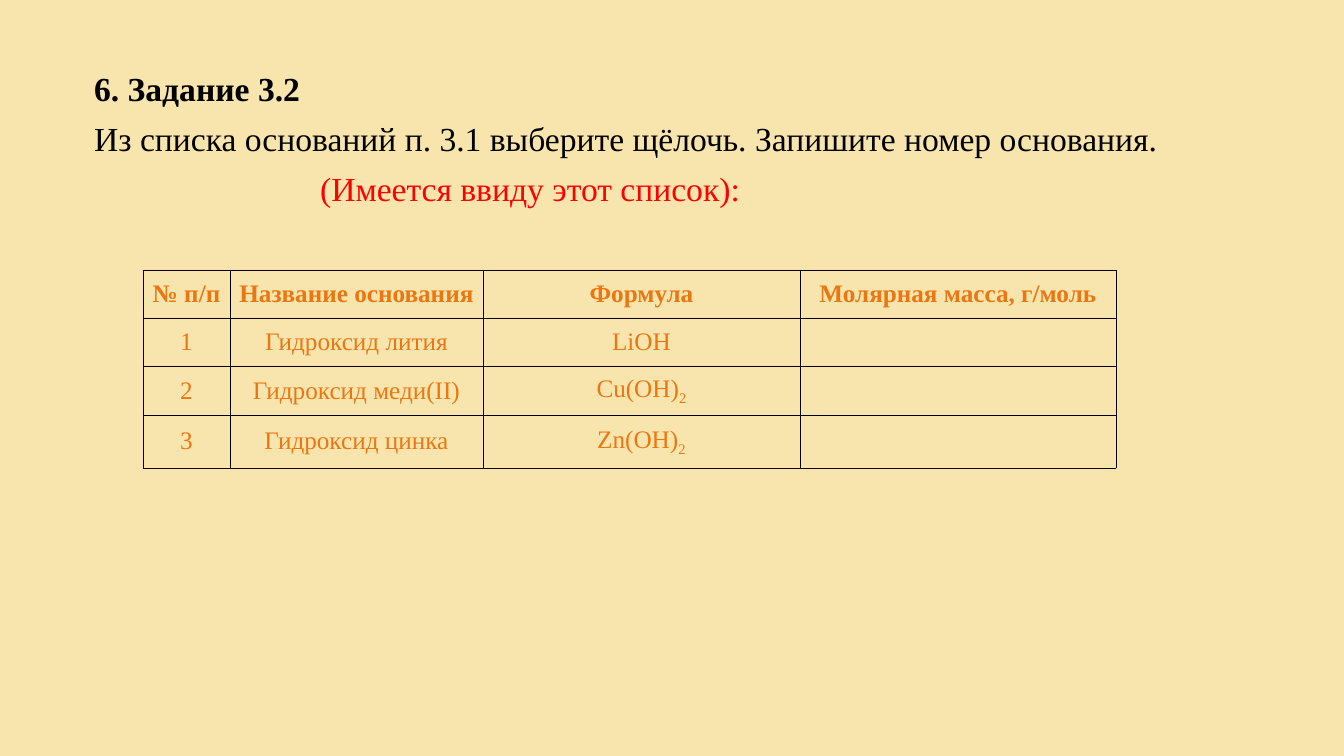
from lxml.etree import SubElement
from pptx import Presentation
from pptx.dml.color import RGBColor
from pptx.enum.text import MSO_ANCHOR as Anchor, PP_ALIGN as Align
from pptx.oxml import parse_xml
from pptx.oxml.ns import nsdecls, qn
from pptx.util import Pt

EMU_PER_PX = 12192000 / 1344
BLACK, RED, ORANGE, CREAM = "000000", "FF0000", "EB7712", "F7E5AD"


def px(length):
    return round(length * EMU_PER_PX)


def color(value):
    return RGBColor.from_string(value)


class TaskSlide:
    """Holds the style and the current slide."""

    font_name = "Times New Roman"
    border_width = Pt(0.6)

    def __init__(self, deck):
        self.slide = deck.slides.add_slide(deck.slide_layouts[1])
        fill = self.slide.background.fill
        fill.solid()
        fill.fore_color.rgb = color(CREAM)
        title = self.slide.shapes.title
        title.element.getparent().remove(title.element)

    def style(self, span, size, tint, bold=False):
        span.font.name = self.font_name
        span.font.size = Pt(size)
        span.font.bold = bold
        span.font.color.rgb = color(tint)

    def body(self, left, top, width, height, lines):
        box = self.slide.placeholders[1]
        box.left, box.top, box.width, box.height = map(px, (left, top, width, height))
        frame = box.text_frame
        frame.vertical_anchor = Anchor.TOP
        frame.text = "\n".join(text for text, *_ in lines)
        for number, (para, (_, indent, tint, bold)) in enumerate(zip(frame.paragraphs, lines)):
            properties = para._p.get_or_add_pPr()
            properties.set("marL", str(px(indent)))
            properties.set("indent", "0")
            SubElement(properties, qn("a:buNone"))
            para.alignment = Align.LEFT
            para.line_spacing = 0.9
            para.space_before = Pt(10 if number else 0)
            self.style(para.runs[0], 24, tint, bold)

    def border(self, cell):
        properties = cell._tc.get_or_add_tcPr()
        for position, side in enumerate("LRTB"):
            line = parse_xml(
                f'<a:ln{side} {nsdecls("a")} w="{self.border_width}"><a:solidFill>'
                f'<a:srgbClr val="{BLACK}"/></a:solidFill></a:ln{side}>'
            )
            properties.insert(position, line)

    def cell(self, cell, text, bold):
        cell.fill.background()
        self.border(cell)
        cell.vertical_anchor = Anchor.MIDDLE
        cell.margin_left = cell.margin_right = cell.margin_top = cell.margin_bottom = px(3)
        para = cell.text_frame.paragraphs[0]
        para.alignment = Align.CENTER
        base, _, subscript = text.partition("_")
        for part in filter(None, (base, subscript)):
            span = para.add_run()
            span.text = part
            self.style(span, 18, ORANGE, bold)
        if subscript:
            span._r.get_or_add_rPr().set("baseline", "-25000")

    def table(self, left, top, widths, heights, rows):
        frame = self.slide.shapes.add_table(
            len(rows), len(widths), px(left), px(top), px(sum(widths)), px(sum(heights))
        )
        table = frame.table
        table.first_row = table.horz_banding = False
        for column, width in zip(table.columns, widths):
            column.width = px(width)
        for row, height in zip(table.rows, heights):
            row.height = px(height)
        for row_number, row in enumerate(rows):
            for column_number, text in enumerate(row):
                self.cell(table.cell(row_number, column_number), text, row_number == 0)


def main():
    deck = Presentation()
    deck.slide_width, deck.slide_height = px(1344), px(756)
    page = TaskSlide(deck)
    page.body(84, 67, 1192, 443, [
        ("6. Задание 3.2", 0, BLACK, True),
        ("Из списка оснований п. 3.1 выберите щёлочь. Запишите номер основания.", 0, BLACK, False),
        ("(Имеется ввиду этот список):", 226, RED, False),
    ])
    page.table(143, 270, [87, 253, 317, 316], [48, 48, 49, 53], [
        ("№ п/п", "Название основания", "Формула", "Молярная масса, г/моль"),
        ("1", "Гидроксид лития", "LiOH", ""),
        ("2", "Гидроксид меди(II)", "Cu(OH)_2", ""),
        ("3", "Гидроксид цинка", "Zn(OH)_2", ""),
    ])
    deck.save("out.pptx")


if __name__ == "__main__":
    main()
